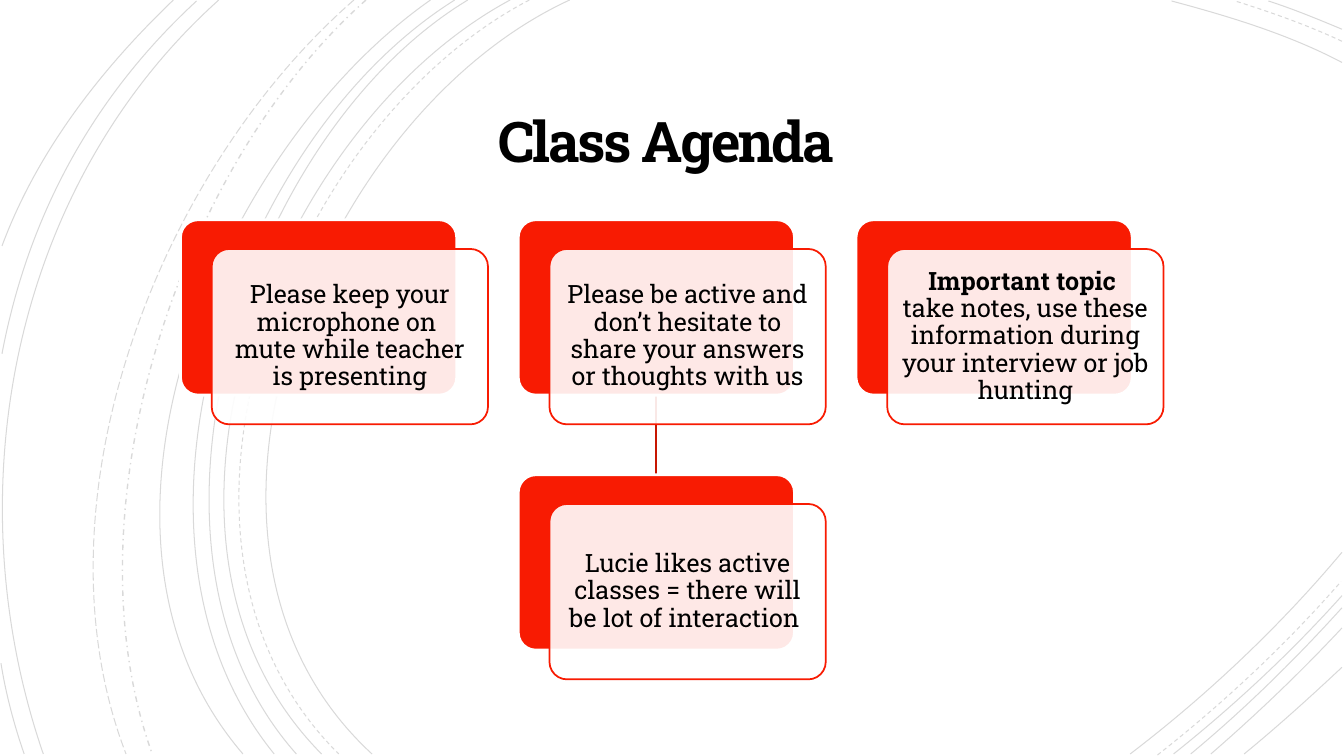
"""Build the class agenda slide: four layered cards over a field of faint arcs."""
from lxml.etree import SubElement
from pptx import Presentation
from pptx.dml.color import RGBColor as Rgb
from pptx.enum.dml import MSO_LINE as Dash
from pptx.enum.shapes import MSO_CONNECTOR as Link, MSO_SHAPE as Kind
from pptx.enum.text import MSO_ANCHOR as Anchor, MSO_AUTO_SIZE as Fit, PP_ALIGN as Align
from pptx.oxml.ns import qn
from pptx.util import Inches, Pt

HUES = {"ink": "000000", "red": "F81B02", "dark": "C71602", "white": "FFFFFF"}
HUES = {name: Rgb.from_string(code) for name, code in HUES.items()}
FONT = "Roboto Slab"


def fade(shape, share):
    """Set the opacity, in percent, of the first colour in a shape."""
    hue = shape._element.spPr.find(".//" + qn("a:srgbClr"))
    SubElement(hue, qn("a:alpha")).set("val", str(share * 1000))


def write(frame, lines, size, pad, lead):
    """Fill a text frame with centred lines given as text and weight."""
    frame.word_wrap = True
    frame.auto_size = Fit.NONE
    frame.vertical_anchor = Anchor.MIDDLE
    frame.margin_left = frame.margin_right = Inches(pad)
    frame.margin_top = frame.margin_bottom = Inches(pad)
    para = frame.paragraphs[0]
    para.alignment = Align.CENTER
    para.line_spacing = lead
    for text, bold in lines:
        if para.runs:
            para.add_line_break()
        run = para.add_run()
        run.text = text
        run.font.name = FONT
        run.font.size = Pt(size)
        run.font.bold = bold
        run.font.color.rgb = HUES["ink"]


deck = Presentation()
deck.slide_width, deck.slide_height = Inches(13.33), Inches(7.5)
slide = deck.slides.add_slide(deck.slide_layouts[5])
shapes = slide.shapes

sheet = shapes.add_shape(Kind.RECTANGLE, 0, 0, deck.slide_width, deck.slide_height)
sheet.shadow.inherit = False
sheet.fill.solid()
sheet.fill.fore_color.rgb = HUES["white"]
sheet.line.fill.background()

ARCS = {
    Dash.SOLID: [
        (5.65, 0, 3.15, 1.15, 1.43, 5.4, 3.69, 7.48),
        (13.31, 0.62, 12.78, 0.34, 12.18, 0.16, 11.62, 0.01),
        (11.21, 7.48, 11.97, 6.9, 12.69, 6.22, 13.31, 5.48),
        (5.06, 0, 2.7, 1.27, 1.1, 5.37, 3.19, 7.48),
        (13.31, 0.29, 13.07, 0.19, 12.83, 0.09, 12.58, 0.01),
        (11.64, 7.48, 12.23, 7.01, 12.8, 6.48, 13.31, 5.91),
        (4.64, 0, 2.44, 1.33, 1.1, 5.41, 2.94, 7.48),
        (11.81, 7.48, 12.34, 7.04, 12.84, 6.55, 13.31, 6.03),
        (4.51, 0, 2.31, 1.38, 0.97, 5.33, 2.72, 7.48),
        (12.01, 7.48, 12.46, 7.09, 12.9, 6.67, 13.31, 6.23),
        (4.27, 0, 2.17, 1.47, 0.53, 5.29, 2.41, 7.48),
        (12.34, 7.48, 12.67, 7.21, 12.99, 6.92, 13.31, 6.62),
        (2.17, 0, 0.11, 1.85, -0.46, 4.9, 0.43, 7.48),
        (1.95, 0.01, 0.92, 0.96, 0.28, 2.14, 0.02, 3.51),
        (0.01, 6.58, 0.06, 6.89, 0.14, 7.19, 0.24, 7.48),
        (1.72, 0, 1, 0.69, 0.37, 1.5, 0.02, 2.44),
    ],
    Dash.DASH: [
        (5.25, 0, 2.85, 1.25, 1.23, 5.37, 3.36, 7.48),
        (13.31, 0.41, 12.97, 0.25, 12.6, 0.12, 12.25, 0.01),
        (11.48, 7.49, 12.13, 6.98, 12.75, 6.4, 13.3, 5.77),
    ],
    Dash.DASH_DOT: [(3.63, 0, 1.76, 1.66, 0.65, 5.09, 1.51, 7.48)],
    Dash.LONG_DASH: [(3.51, 0, 1.57, 1.69, 0.29, 4.99, 1.25, 7.48)],
}
for dash, curves in ARCS.items():
    for curve in curves:
        dots = [(Inches(x), Inches(y)) for x, y in zip(curve[::2], curve[1::2])]
        pen = shapes.build_freeform(*dots[0])
        pen.add_line_segments(dots[1:], close=False)
        arc = pen.convert_to_shape()
        route = arc._element.spPr.find(".//" + qn("a:path"))
        bend = SubElement(route, qn("a:cubicBezTo"))
        for leg in route.findall(qn("a:lnTo")):
            bend.append(leg[0])
            route.remove(leg)
        arc.shadow.inherit = False
        arc.fill.background()
        arc.line.color.rgb = HUES["ink"]
        arc.line.width = Pt(1 if dash == Dash.DASH_DOT else 0.75)
        arc.line.dash_style = dash
        fade(arc, 15)

title = shapes.title
shapes._spTree.append(title._element)
title.left, title.top = Inches(1.92), Inches(0.87)
title.width, title.height = Inches(9.49), Inches(1.15)
write(title.text_frame, [("Class Agenda ", True)], 40, 0.25, 0.85)
title.text_frame.paragraphs[0].runs[0].font._element.set("spc", "-150")

stem = shapes.add_connector(Link.STRAIGHT, 0, 0, 0, 0)
stem.line.color.rgb = HUES["dark"]
stem.line.width = Pt(1.25)
SubElement(stem._element.spPr, qn("a:effectLst"))

LEFT, TOP = 1.79, 2.18
COL, ROW = 3.35, 2.53
WIDE, HIGH = 2.74, 1.74
CARDS = [
    (0, 0, [("Please keep your microphone on ", False),
            ("mute while teacher is presenting", False)]),
    (1, 0, [("Please be active and don’t hesitate to share your answers "
             "or thoughts with us", False)]),
    (1, 1, [("Lucie likes active classes = there will be lot of interaction ", False)]),
    (2, 0, [("Important topic ", True),
            ("take notes, use these information during your interview "
             "or job hunting", False)]),
]
backs = {}
for col, row, lines in CARDS:
    x, y = LEFT + col * COL, TOP + row * ROW
    for dx, dy, fill, edge, width in [(0, 0, "red", "white", 2),
                                      (0.31, 0.29, "white", "red", 1.25)]:
        card = shapes.add_shape(Kind.ROUNDED_RECTANGLE, Inches(x + dx),
                                Inches(y + dy), Inches(WIDE), Inches(HIGH))
        card.adjustments[0] = 0.1
        card.shadow.inherit = False
        card.fill.solid()
        card.fill.fore_color.rgb = HUES[fill]
        card.line.color.rgb = HUES[edge]
        card.line.width = Pt(width)
        backs.setdefault((col, row), card)
    fade(card, 90)
    write(card.text_frame, lines, 18, 0.07, 0.9)

stem.begin_connect(backs[1, 0], 2)
stem.end_connect(backs[1, 1], 0)

deck.save("out.pptx")
